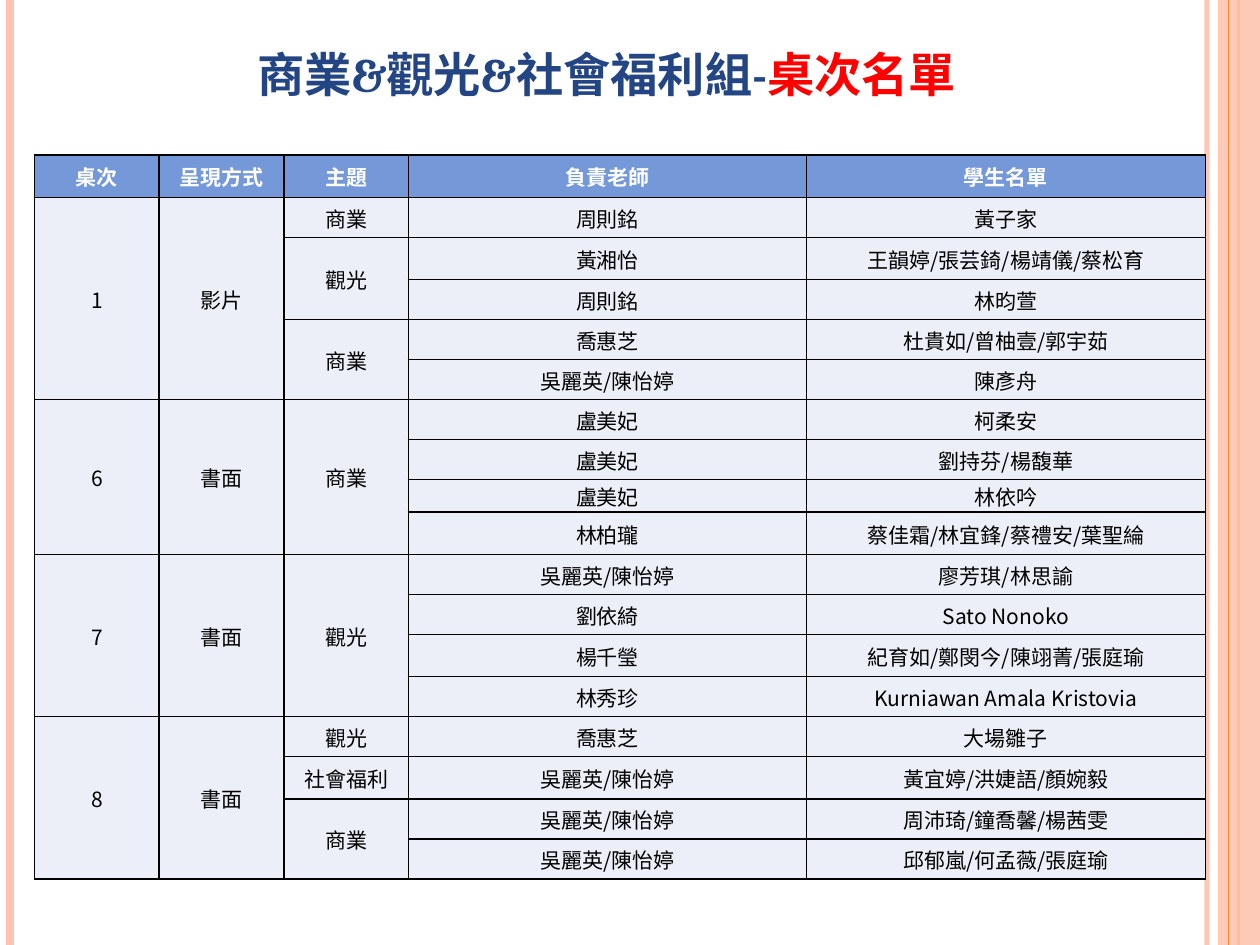
from lxml import etree
from pptx import Presentation
from pptx import util as u
from pptx.dml.color import RGBColor
from pptx.enum import shapes, text
from pptx.oxml import ns

COLORS = {
    "peach": "FEC3AE", "orange": "FE8637", "navy": "244583", "red": "FF0000",
    "header": "7598D9", "body": "ECEFF8", "white": "FFFFFF", "black": "000000",
}
TITLE = [("商業&觀光&社會福利組-", "navy"), ("桌次名單", "red")]
HEADINGS = ["桌次", "呈現方式", "主題", "負責老師", "學生名單"]
GROUPS = [
    ("1", "影片", [
        ("商業", [("周則銘", "黃子家")]),
        ("觀光", [("黃湘怡", "王韻婷/張芸錡/楊靖儀/蔡松育"), ("周則銘", "林昀萱")]),
        ("商業", [("喬惠芝", "杜貴如/曾柚壹/郭宇茹"), ("吳麗英/陳怡婷", "陳彥舟")]),
    ]),
    ("6", "書面", [
        ("商業", [("盧美妃", "柯柔安"), ("盧美妃", "劉持芬/楊馥華"), ("盧美妃", "林依吟"),
                ("林柏瓏", "蔡佳霜/林宜鋒/蔡禮安/葉聖綸")]),
    ]),
    ("7", "書面", [
        ("觀光", [("吳麗英/陳怡婷", "廖芳琪/林思諭"), ("劉依綺", "Sato Nonoko"),
                ("楊千瑩", "紀育如/鄭閔今/陳翊菁/張庭瑜"),
                ("林秀珍", "Kurniawan Amala Kristovia")]),
    ]),
    ("8", "書面", [
        ("觀光", [("喬惠芝", "大場雛子")]),
        ("社會福利", [("吳麗英/陳怡婷", "黃宜婷/洪婕語/顏婉毅")]),
        ("商業", [("吳麗英/陳怡婷", "周沛琦/鐘喬馨/楊茜雯"),
                ("吳麗英/陳怡婷", "邱郁嵐/何孟薇/張庭瑜")]),
    ]),
]
COLUMN_WIDTHS = [71.2, 71.2, 71.2, 227.6, 227.8]
ROW_HEIGHT = 22.85
SPECIAL_HEIGHTS = {0: 24.2, 2: 24.2, 8: 18.6, 9: 24.2, 12: 24.2, 15: 24.2}
BACK_RULES = [(689.8, "peach", 3, 93), (5.8, "peach", 4.5, 100), (707.8, "orange", 1.5, 100)]
FRONT_RULES = [(702, "orange", 0.75, 100)]
PAGE_WIDTH, PAGE_HEIGHT = 720, 540


def color(name):
    return RGBColor.from_string(COLORS[name])


def set_alpha(shape, percent):
    for node in shape.element.spPr.iter(ns.qn("a:srgbClr")):
        etree.SubElement(node, ns.qn("a:alpha"), val=str(percent * 1000))


def add_rules(page, rules):
    for x, name, width, alpha in rules:
        rule = page.shapes.add_connector(
            shapes.MSO_CONNECTOR.STRAIGHT, u.Pt(x), 0, u.Pt(x), u.Pt(PAGE_HEIGHT))
        rule.line.color.rgb = color(name)
        rule.line.width = u.Pt(width)
        if alpha < 100:
            set_alpha(rule, alpha)
        etree.SubElement(rule.element.spPr, ns.qn("a:effectLst"))


def add_margin(page):
    add_rules(page, BACK_RULES)
    band = page.shapes.add_shape(
        shapes.MSO_SHAPE.RECTANGLE, u.Pt(696), 0, u.Pt(24), u.Pt(PAGE_HEIGHT))
    band.shadow.inherit = False
    band.fill.solid()
    band.fill.fore_color.rgb = color("peach")
    band.line.fill.background()
    set_alpha(band, 87)
    add_rules(page, FRONT_RULES)


def style_cell(cell, fill):
    cell.margin_left = cell.margin_right = cell.margin_top = u.Pt(0.7)
    cell.margin_bottom = 0
    cell.vertical_anchor = text.MSO_ANCHOR.MIDDLE
    properties = cell._tc.get_or_add_tcPr()
    for side in ("lnL", "lnR", "lnT", "lnB"):
        border = etree.SubElement(properties, ns.qn(f"a:{side}"), w=str(u.Pt(1)))
        paint = etree.SubElement(border, ns.qn("a:solidFill"))
        etree.SubElement(paint, ns.qn("a:srgbClr"), val=COLORS["black"])
    cell.fill.solid()
    cell.fill.fore_color.rgb = color(fill)


def write_cell(cell, words, is_header=False):
    para = cell.text_frame.paragraphs[0]
    para.text = words
    para.alignment = text.PP_ALIGN.CENTER
    para.font.name = "Noto Sans CJK SC"
    para.font.size = u.Pt(12)
    para.font.bold = is_header
    para.font.color.rgb = color("white" if is_header else "black")


def write_span(table, row, column, count, words):
    cell = table.cell(row, column)
    if count > 1:
        cell.merge(table.cell(row + count - 1, column))
    write_cell(cell, words)


def add_roster(page):
    row_count = 1 + sum(len(pairs) for group in GROUPS for _, pairs in group[2])
    heights = [SPECIAL_HEIGHTS.get(row, ROW_HEIGHT) for row in range(row_count)]
    table = page.shapes.add_table(
        row_count, len(HEADINGS), u.Pt(19.8), u.Pt(88.6),
        u.Pt(sum(COLUMN_WIDTHS)), u.Pt(sum(heights))).table
    table.horz_banding = False
    for column, width in zip(table.columns, COLUMN_WIDTHS):
        column.width = u.Pt(width)
    for index, height in enumerate(heights):
        table.rows[index].height = u.Pt(height)
        for cell in table.rows[index].cells:
            style_cell(cell, "body" if index else "header")
    for column, heading in enumerate(HEADINGS):
        write_cell(table.cell(0, column), heading, True)
    row = 1
    for number, form, topics in GROUPS:
        size = sum(len(pairs) for _, pairs in topics)
        write_span(table, row, 0, size, number)
        write_span(table, row, 1, size, form)
        for topic, pairs in topics:
            write_span(table, row, 2, len(pairs), topic)
            for teacher, students in pairs:
                write_cell(table.cell(row, 3), teacher)
                write_cell(table.cell(row, 4), students)
                row += 1


def add_title(page):
    box = page.shapes.add_textbox(u.Pt(52.6), u.Pt(32.4), u.Pt(588.2), u.Pt(61.2))
    frame = box.text_frame
    frame.word_wrap = True
    frame.vertical_anchor = text.MSO_ANCHOR.BOTTOM
    frame.margin_bottom = u.Pt(35.6)
    para = frame.paragraphs[0]
    para.alignment = text.PP_ALIGN.CENTER
    para.font.name = "Cambria"
    para.font.size = u.Pt(27)
    para.font.bold = True
    for words, name in TITLE:
        span = para.add_run()
        span.text = words
        span.font.color.rgb = color(name)


def main():
    deck = Presentation()
    deck.slide_width, deck.slide_height = u.Pt(PAGE_WIDTH), u.Pt(PAGE_HEIGHT)
    page = deck.slides.add_slide(deck.slide_layouts[6])
    add_margin(page)
    add_roster(page)
    add_title(page)
    deck.save("out.pptx")


if __name__ == "__main__":
    main()
